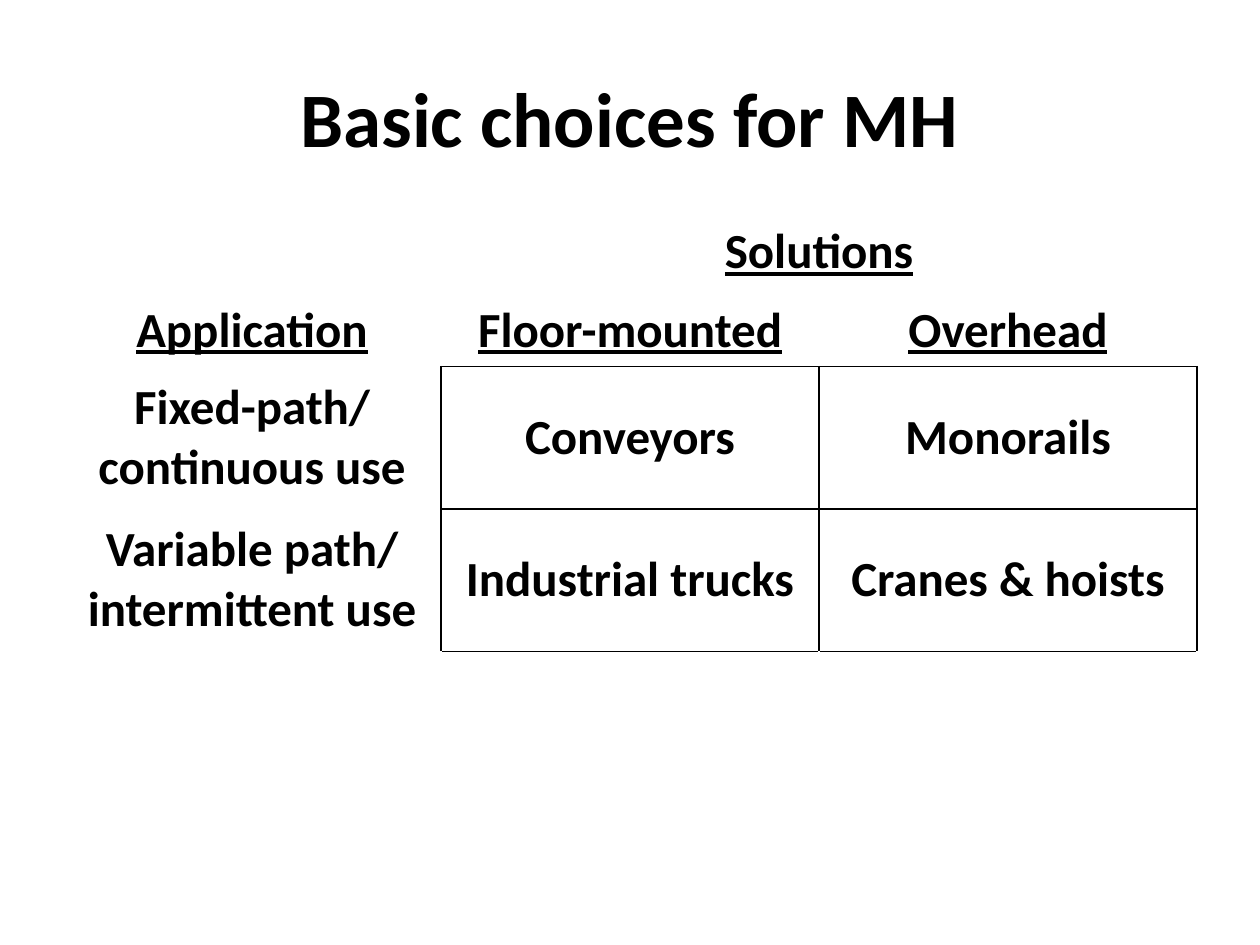
from lxml import etree
from pptx import Presentation
from pptx.dml.color import RGBColor
from pptx.enum.text import MSO_ANCHOR, PP_ALIGN
from pptx.oxml.ns import qn
from pptx.util import Inches, Pt

MIDDLE, BOTTOM = MSO_ANCHOR.MIDDLE, MSO_ANCHOR.BOTTOM
CENTER = PP_ALIGN.CENTER
COLORS = {"ink": "000000", "paper": "FFFFFF"}
SIDES = {"lnL": (0, -1), "lnR": (0, 1), "lnT": (-1, 0), "lnB": (1, 0)}

WIDTHS = [3, 3, 3]
HEIGHTS = [0.96, 0.62, 1.13, 1.13, 0.96]
ROWS = [
    ["", "Solutions", ""],
    ["Application", "Floor-mounted", "Overhead"],
    ["Fixed-path/ continuous use", "Conveyors", "Monorails"],
    ["Variable path/ intermittent use", "Industrial trucks", "Cranes & hoists"],
    ["", "", ""],
]
HEADS = 2


def boxed(row, col):
    """Tell whether a cell is one of the four framed solutions."""
    return row in (2, 3) and col in (1, 2)


class Deck:
    def __init__(self):
        self.prs = Presentation()
        self.prs.slide_width, self.prs.slide_height = Inches(10), Inches(7.5)
        self.slide = self.prs.slides.add_slide(self.prs.slide_layouts[6])
        self.style = {"name": "Calibri", "bold": True}

    def label(self, frame, text, **look):
        para = frame.paragraphs[0]
        para.alignment = CENTER
        run = para.add_run()
        run.text = text
        for key, value in {**self.style, **look}.items():
            setattr(run.font, key, value)
        run.font.color.rgb = RGBColor.from_string(COLORS["ink"])

    def title(self, text, *area):
        box = self.slide.shapes.add_textbox(*map(Inches, area))
        frame = box.text_frame
        frame.word_wrap = True
        frame.vertical_anchor = MIDDLE
        self.label(frame, text, size=Pt(44))

    def border(self, cell, row, col):
        """Draw an edge dark where it touches a framed cell, else white."""
        props = cell._tc.get_or_add_tcPr()
        for spot, (tag, (down, right)) in enumerate(SIDES.items()):
            dark = boxed(row, col) or boxed(row + down, col + right)
            line = etree.Element(qn("a:" + tag), w=str(Pt(1)))
            fill = etree.SubElement(line, qn("a:solidFill"))
            color = COLORS["ink" if dark else "paper"]
            etree.SubElement(fill, qn("a:srgbClr"), val=color)
            props.insert(spot, line)

    def table(self, rows, left, top):
        area = (left, top, sum(WIDTHS), sum(HEIGHTS))
        shape = self.slide.shapes.add_table(
            len(rows), len(WIDTHS), *map(Inches, area))
        grid = shape.table
        grid.first_row = grid.horz_banding = False
        for col, width in zip(grid.columns, WIDTHS):
            col.width = Inches(width)
        for row, height in zip(grid.rows, HEIGHTS):
            row.height = Inches(height)
        grid.cell(0, 1).merge(grid.cell(0, 2))
        for r, texts in enumerate(rows):
            head = r < HEADS
            for c, text in enumerate(texts):
                cell = grid.cell(r, c)
                cell.fill.background()
                cell.vertical_anchor = BOTTOM if head else MIDDLE
                self.border(cell, r, c)
                if text:
                    self.label(cell.text_frame, text,
                               size=Pt(28), underline=head)


def main():
    deck = Deck()
    deck.title("Basic choices for MH", 0.5, 0.3, 9, 1.25)
    deck.table(ROWS, 0.5, 1.33)
    deck.prs.save("out.pptx")


if __name__ == "__main__":
    main()
